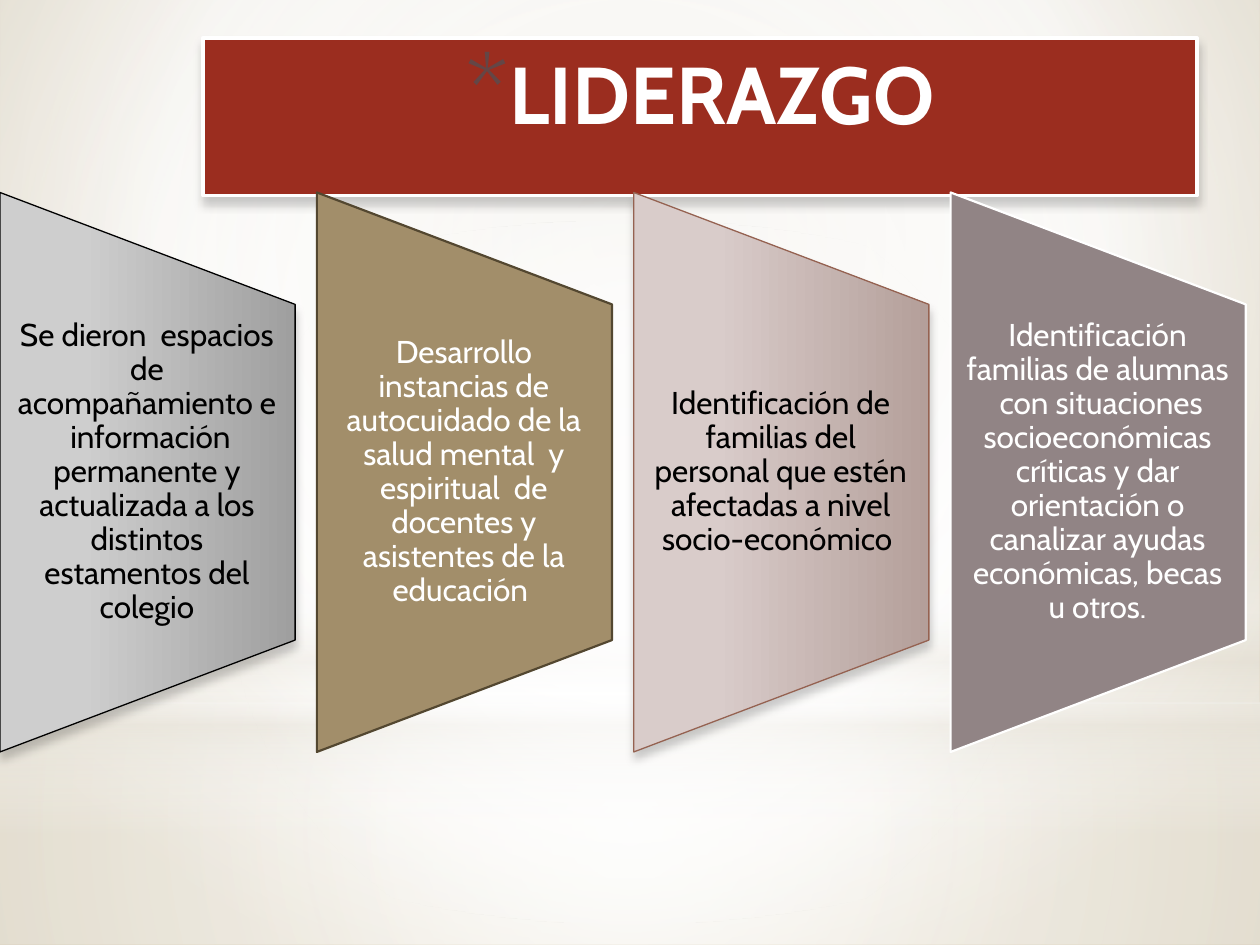
import pptx
import pptx.util
import pptx.oxml
import pptx.oxml.ns
import pptx.dml.color
import pptx.enum.shapes
import pptx.enum.text

RGB = pptx.dml.color.RGBColor
SHAPE = pptx.enum.shapes.MSO_SHAPE
ANCHOR = pptx.enum.text.MSO_ANCHOR
Pt = pptx.util.Pt

WHITE = RGB(0xFF, 0xFF, 0xFF)
BLACK = RGB(0, 0, 0)
SAND = RGB(0xE9, 0xE5, 0xDC)
PAPER = RGB(0xE3, 0xDD, 0xCF)
PAPER_EDGE = RGB(0xCD, 0xBF, 0x9F)
BRICK = RGB(0x9B, 0x2D, 0x1F)
BULLET = RGB(0x64, 0x46, 0x46)
SILVER, GREY = RGB(0xCE, 0xCE, 0xCE), RGB(0x9F, 0x9F, 0x9F)
OLIVE, OLIVE_EDGE = RGB(0xA2, 0x8E, 0x6A), RGB(0x53, 0x47, 0x30)
ROSE, ROSE_DARK = RGB(0xD9, 0xCC, 0xCA), RGB(0xB4, 0x9F, 0x9A)
ROSE_EDGE = RGB(0x95, 0x62, 0x51)
MAUVE = RGB(0x91, 0x84, 0x85)

FONT = "Cabin"
CENTRE = (50, 50, 50, 50)
COLUMN_PITCH, COLUMN_WIDTH = 0.2515, 0.2342


def xml(markup):
    return pptx.oxml.parse_xml(
        markup.replace(">", f' {pptx.oxml.ns.nsdecls("a")}>', 1))


def gradient(stops, focus=None):
    """Stops are (position, colour, opacity); a focus makes it circular."""
    marks = "".join(
        f'<a:gs pos="{pos * 1000}"><a:srgbClr val="{colour}">'
        f'<a:alpha val="{opacity * 1000}"/></a:srgbClr></a:gs>'
        for pos, colour, opacity in stops)
    if focus:
        sides = " ".join(f'{side}="{share * 1000}"' for side, share in zip("ltrb", focus))
        run = f'<a:path path="circle"><a:fillToRect {sides}/></a:path>'
    else:
        run = '<a:lin ang="5400000" scaled="0"/>'
    return xml(f'<a:gradFill rotWithShape="1"><a:gsLst>{marks}</a:gsLst>{run}</a:gradFill>')


def write(frame, text, size, colour, bold=False, spacing=None, anchor=ANCHOR.TOP):
    frame.word_wrap = True
    frame.auto_size = pptx.enum.text.MSO_AUTO_SIZE.NONE
    frame.vertical_anchor = anchor
    paragraph = frame.paragraphs[0]
    paragraph.alignment = pptx.enum.text.PP_ALIGN.CENTER
    paragraph.line_spacing = spacing
    run = paragraph.add_run()
    run.text = text
    run.font.name, run.font.size, run.font.bold = FONT, Pt(size), bold
    run.font.color.rgb = colour
    return paragraph


class SlideBuilder:
    def __init__(self, deck):
        self.width, self.height = deck.slide_width, deck.slide_height
        self.slide = deck.slides.add_slide(deck.slide_layouts[5])

    def box(self, x, y, w, h):
        """Turn shares of the slide into lengths."""
        return (int(x * self.width), int(y * self.height),
                int(w * self.width), int(h * self.height))

    def paint(self, shape, fill, edge=None, weight=0, shadow=False):
        shape.fill.solid()
        if isinstance(fill, RGB):
            shape.fill.fore_color.rgb = fill
        else:
            solid = shape._element.spPr.find(pptx.oxml.ns.qn("a:solidFill"))
            solid.getparent().replace(solid, fill)
        if edge is None:
            shape.line.fill.background()
        else:
            shape.line.color.rgb = edge
            shape.line.width = Pt(weight)
        shape.shadow.inherit = False
        if shadow:
            effects = shape._element.spPr.find(pptx.oxml.ns.qn("a:effectLst"))
            effects.append(xml(
                f'<a:outerShdw blurRad="{Pt(5)}" dist="{Pt(4)}" dir="5400000" rotWithShape="0">'
                '<a:srgbClr val="000000"><a:alpha val="20000"/></a:srgbClr></a:outerShdw>'))

    def background(self, stops, focus):
        self.slide.background.fill.solid()
        solid = self.slide._element.find(
            ".//" + pptx.oxml.ns.qn("p:bgPr")).find(pptx.oxml.ns.qn("a:solidFill"))
        solid.getparent().replace(solid, gradient(stops, focus))

    def glow(self, kind, top, height, stops, focus=None):
        shape = self.slide.shapes.add_shape(kind, *self.box(0, top, 1, height))
        self.paint(shape, gradient(stops, focus))

    def title(self, text, area):
        banner = self.slide.shapes.title
        self.slide.shapes._spTree.append(banner._element)  # in front of the backdrop
        banner.left, banner.top, banner.width, banner.height = self.box(*area)
        self.paint(banner, BRICK, WHITE, 2, shadow=True)
        heading = write(banner.text_frame, text, 46, WHITE, bold=True)
        properties = heading._p.get_or_add_pPr()
        properties.set("marL", str(pptx.util.Inches(0.35)))
        properties.set("indent", str(-pptx.util.Inches(0.35)))
        for part in (f'<a:buClr><a:srgbClr val="{BULLET}"/></a:buClr>',
                     '<a:buSzPct val="128000"></a:buSzPct>',
                     f'<a:buFont typeface="{FONT}"></a:buFont>',
                     '<a:buChar char="*"></a:buChar>'):
            properties.append(xml(part))

    def panel(self, column, text, colour, fill, edge, weight, shadow):
        left, top, width, height = self.box(
            column * COLUMN_PITCH, 0.2037, COLUMN_WIDTH, 0.592)
        # The outline lies on its side, so its width and height change places
        outline = self.slide.shapes.add_shape(
            SHAPE.FLOWCHART_MANUAL_OPERATION, left + (width - height) // 2,
            top + (height - width) // 2, height, width)
        outline.rotation = 270
        self.paint(outline, fill, edge, weight, shadow)

        inner = height * 3 // 5
        caption = self.slide.shapes.add_textbox(left, top + height // 5, width, inner)
        frame = caption.text_frame
        frame.margin_left, frame.margin_right = pptx.util.Inches(0.12), pptx.util.Inches(0.13)
        frame.margin_top = frame.margin_bottom = 0
        write(frame, text, 18, colour, spacing=0.9, anchor=ANCHOR.MIDDLE)


def main():
    deck = pptx.Presentation()
    deck.slide_width, deck.slide_height = pptx.util.Inches(10), pptx.util.Inches(7.5)
    page = SlideBuilder(deck)

    # Backdrop
    page.background([(0, PAPER, 100), (60, WHITE, 100), (100, PAPER_EDGE, 100)],
                    (20, 10, 20, 60))
    page.glow(SHAPE.RECTANGLE, 0.744, 0.256,
              [(0, WHITE, 91), (37, WHITE, 76), (100, SAND, 79)], CENTRE)
    page.glow(SHAPE.RECTANGLE, 0, 0.744,
              [(0, WHITE, 89), (48, WHITE, 62), (100, SAND, 79)], CENTRE)
    page.glow(SHAPE.RECTANGLE, 0.55, 0.333,
              [(0, WHITE, 0), (29, WHITE, 30), (45, SAND, 40),
               (55, WHITE, 26), (65, SAND, 60), (100, WHITE, 0)])
    page.glow(SHAPE.OVAL, 0.233, 0.744, [(0, WHITE, 100), (56, WHITE, 0)], CENTRE)

    # Title banner
    page.title("LIDERAZGO", (0.161, 0.04, 0.789, 0.167))

    # Leadership actions: text, its colour, fill, edge, edge weight, shadow
    actions = [
        ("Se dieron  espacios de acompañamiento e  información permanente y "
         "actualizada a los distintos estamentos del colegio",
         BLACK, gradient([(28, SILVER, 100), (100, GREY, 100)]), BLACK, 0.75, True),
        ("Desarrollo instancias de autocuidado de la salud mental  y espiritual  de "
         "docentes y asistentes de la educación ",
         WHITE, OLIVE, OLIVE_EDGE, 1.25, False),
        ("Identificación de familias del personal que estén afectadas a nivel "
         "socio-económico ",
         BLACK, gradient([(28, ROSE, 100), (100, ROSE_DARK, 100)]), ROSE_EDGE, 0.75, True),
        ("Identificación familias de alumnas  con situaciones socioeconómicas críticas "
         "y dar orientación o canalizar ayudas económicas, becas u otros.",
         WHITE, MAUVE, WHITE, 1.25, False),
    ]
    for column, action in enumerate(actions):
        page.panel(column, *action)

    deck.save("out.pptx")


if __name__ == "__main__":
    main()
